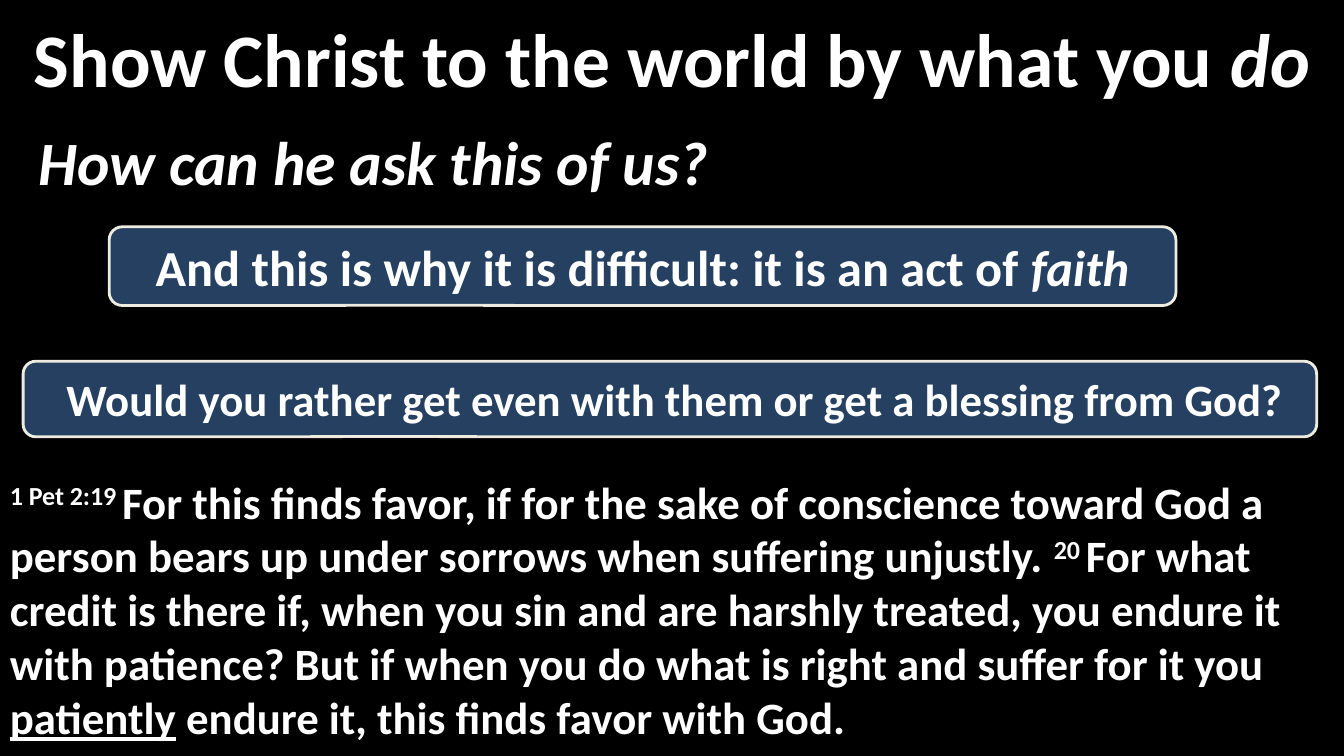
from dataclasses import dataclass

from pptx import Presentation
from pptx.dml.color import RGBColor
from pptx.enum.shapes import MSO_SHAPE
from pptx.enum.text import MSO_ANCHOR, PP_ALIGN
from pptx.util import Emu, Pt

EMU_PER_PX = 9525
SLIDE_WIDTH, SLIDE_HEIGHT = 1280, 720


@dataclass(frozen=True)
class Theme:
    """Colours, font and type sizes of the slide."""
    background: RGBColor = RGBColor.from_string("000000")
    text: RGBColor = RGBColor.from_string("FFFFFF")
    callout_fill: RGBColor = RGBColor.from_string("254061")
    callout_line: RGBColor = RGBColor.from_string("EEECE1")
    font: str = "Calibri"
    title_size: int = 54
    question_size: int = 44
    faith_size: int = 36
    body_size: int = 32


THEME = Theme()


def px(*lengths):
    """Turn pixel lengths into EMU."""
    return [Emu(length * EMU_PER_PX) for length in lengths]


def add_runs(shape, runs, size, alignment, anchor):
    """Write (text, style) runs into the single paragraph of a shape."""
    frame = shape.text_frame
    frame.word_wrap = True
    frame.vertical_anchor = anchor
    paragraph = frame.paragraphs[0]
    paragraph.alignment = alignment
    for text, style in runs:
        run = paragraph.add_run()
        run.text = text
        font = run.font
        font.name, font.size, font.bold = THEME.font, Pt(size), True
        font.color.rgb = THEME.text
        if style == "italic":
            font.italic = True
        elif style == "underline":
            font.underline = True
        elif style == "superscript":
            run._r.get_or_add_rPr().set("baseline", "30000")


def add_title(slide, box, runs):
    """Add the centred heading."""
    shape = slide.shapes.add_textbox(*px(*box))
    add_runs(shape, runs, THEME.title_size, PP_ALIGN.CENTER, MSO_ANCHOR.MIDDLE)


def add_callout(slide, box, runs, size, framed=True):
    """Add a rounded callout, with or without its fill and outline."""
    shape = slide.shapes.add_shape(MSO_SHAPE.ROUNDED_RECTANGULAR_CALLOUT, *px(*box))
    shape.shadow.inherit = False
    for index, value in enumerate((-0.219, 0.496, 0.167)):
        shape.adjustments[index] = value
    if framed:
        shape.fill.solid()
        shape.fill.fore_color.rgb = THEME.callout_fill
        shape.line.color.rgb = THEME.callout_line
        shape.line.width = Pt(2)
    else:
        shape.fill.background()
        shape.line.fill.background()
    add_runs(shape, runs, size, PP_ALIGN.CENTER, MSO_ANCHOR.MIDDLE)


def add_passage(slide, box, runs):
    """Add the scripture passage on its dark panel."""
    shape = slide.shapes.add_shape(MSO_SHAPE.RECTANGLE, *px(*box))
    shape.shadow.inherit = False
    shape.fill.solid()
    shape.fill.fore_color.rgb = THEME.background
    shape.line.fill.background()
    add_runs(shape, runs, THEME.body_size, PP_ALIGN.LEFT, MSO_ANCHOR.TOP)


def main():
    """Build and save the slide."""
    presentation = Presentation()
    presentation.slide_width, presentation.slide_height = px(SLIDE_WIDTH, SLIDE_HEIGHT)
    slide = presentation.slides.add_slide(presentation.slide_layouts[6])
    slide.background.fill.solid()
    slide.background.fill.fore_color.rgb = THEME.background

    add_passage(slide, (0, 447, SLIDE_WIDTH, 273), [
        ("1 Pet 2:19 ", "superscript"),
        ("For this finds favor, if for the sake of conscience toward God a person "
         "bears up under sorrows when suffering unjustly. ", None),
        ("20 ", "superscript"),
        ("For what credit is there if, when you sin and are harshly treated, you "
         "endure it with patience? But if when you do what is right and suffer "
         "for it you ", None),
        ("patiently", "underline"),
        (" endure it, this finds favor with God.", None),
    ])
    add_title(slide, (0, 4, SLIDE_WIDTH, 101), [
        ("Show Christ to the world by what you ", None), ("do", "italic")])
    add_callout(slide, (22, 344, 1232, 72), [
        (" Would you rather get even with them or get a blessing from God?", None)],
        THEME.body_size)
    add_callout(slide, (12, 116, 688, 75), [
        ("How can he ask this of us?", "italic")], THEME.question_size, framed=False)
    add_callout(slide, (104, 216, 1016, 75), [
        ("And this is why it is difficult: it is an act of ", None),
        ("faith", "italic")], THEME.faith_size)
    presentation.save("out.pptx")


if __name__ == "__main__":
    main()
